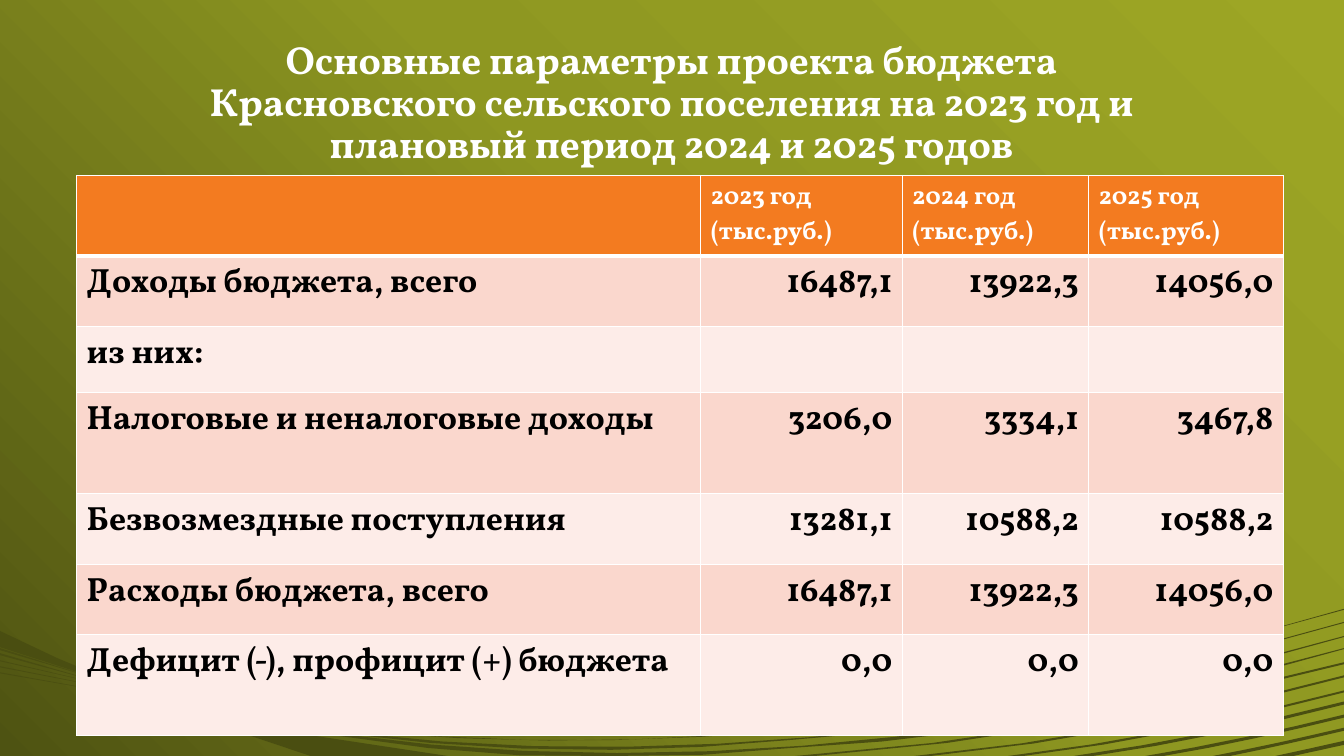
"""Budget summary slide: a title and a table over a green ribbon backdrop."""
from copy import deepcopy

from pptx import Presentation
from pptx import util as u
from pptx.dml.color import RGBColor
from pptx.enum import text
from pptx.oxml import parse_xml
from pptx.oxml.ns import nsdecls, qn

WIDTH, HEIGHT = 13.33, 7.5
FONT = "Vollkorn"
WHITE, BLACK, ORANGE, RIBBON = "FFFFFF", "000000", "F37B20", "4A4E11"
BANDS = ("FAD7CD", "FDECE8")
GRADIENT = [(0, "9DA625"), (0.45, "8E9721"), (1, "4E5312")]

TITLE = ("Основные параметры проекта бюджета Красновского сельского поселения "
         "на 2023 год и плановый период 2024 и 2025 годов")
TITLE_BOX = (1.66, 0.44, 10, 1.27)
TABLE_CORNER = (0.76, 1.74)
COLUMNS = (6.19, 2, 1.85, 1.93)
ROWS = (0.66, 0.7, 0.66, 1, 0.7, 0.7, 1)
BUDGET = [
    ("", "2023 год (тыс.руб.)", "2024 год (тыс.руб.)", "2025 год (тыс.руб.)"),
    ("Доходы бюджета, всего", "16487,1", "13922,3", "14056,0"),
    ("из них:", "", "", ""),
    ("Налоговые и неналоговые доходы", "3206,0", "3334,1", "3467,8"),
    ("Безвозмездные поступления", "13281,1", "10588,2", "10588,2"),
    ("Расходы бюджета, всего", "16487,1", "13922,3", "14056,0"),
    ("Дефицит (-), профицит (+) бюджета", "0,0", "0,0", "0,0"),
]

SHORT_RIBBONS = [(7.35, 0.04, 12.65, 12.83), (7.22, 0.03, 12.03, 12.2),
                 (7.09, 0.03, 11.36, 11.54), (6.96, 0.03, 10.65, 10.84),
                 (6.85, 0.02, 10, 10.15), (6.7, 0.02, 9.07, 9.23),
                 (6.57, 0.02, 7.89, 8.08)]
LONG_RIBBONS = [(6.04, (9.8, 7.08), (6, 7.6), (2.4, 7.11), 7.16, (2.76, 7.16)),
                (6.17, (9.99, 7.13), (6.31, 7.65), (2.76, 7.16), 7.24, (2.58, 7.14)),
                (6.31, (9.93, 7.27), (6.18, 7.75), (2.58, 7.14), 7.34, (2.45, 7.13)),
                (6.43, (9.89, 7.38), (6.08, 7.83), (2.45, 7.13), 7.42, (2.36, 7.11))]
LEFT_RIBBONS = [(6.43, 6.45, 0.88, 6.71), (6.48, 6.5, 1, 6.77), (6.55, 6.56, 1.06, 6.8),
                (6.61, 6.62, 1.2, 6.85), (6.67, 6.68, 1.33, 6.91)]
LEFT_WEDGE = [(0, 6.26), (0.57, 6.53), (1.17, 6.78), (1.8, 6.98), (2.4, 7.11), (3.12, 7.3),
              (4.44, 7.5), (3.08, 7.5), (1.47, 6.96), (0.9, 6.71), (0, 6.42)]


def color(value):
    return RGBColor.from_string(value)


def apply(target, settings):
    for name, value in settings.items():
        setattr(target, name, value)


def write(frame, words, size, ink, paragraph_format):
    paragraph = frame.paragraphs[0]
    apply(paragraph, paragraph_format)
    run = paragraph.add_run()
    run.text = words
    apply(run.font, {"name": FONT, "size": u.Pt(size), "bold": True})
    run.font.color.rgb = color(ink)


def curve(start, first, second, end, steps):
    points = []
    for step in range(steps + 1):
        t = step / steps
        weights = ((1 - t) ** 3, 3 * t * (1 - t) ** 2, 3 * t * t * (1 - t), t ** 3)
        x, y = (sum(w * p[axis] for w, p in zip(weights, (start, first, second, end)))
                for axis in (0, 1))
        points.append((x, min(y, HEIGHT)))
    return points


def short_edge(y, x):
    run, drop = WIDTH - x, HEIGHT - y
    return curve((WIDTH, y), (WIDTH - run / 3, y + drop * (0.3 + 0.22 * drop)),
                 (WIDTH - run * 2 / 3, y + drop * (0.64 + 0.25 * drop)), (x, HEIGHT), 4)


def ribbon_outlines():
    outlines = [LEFT_WEDGE]
    for top, bottom, x, y in LEFT_RIBBONS:
        outlines.append([(0, top), (x, y), (0, bottom)])
    for y, thickness, left, right in SHORT_RIBBONS:
        outlines.append(short_edge(y, left) + short_edge(y + thickness, right)[::-1])
    for y, first, second, tip, middle, end in LONG_RIBBONS:
        upper = curve((WIDTH, y), first, second, tip, 12)
        lower = curve((WIDTH, y + 0.01), (11.46, y + 0.55), (9.62, y + 0.91),
                      (7.86, middle), 6)
        lower += curve((7.86, middle), (6.05, middle + 0.18), (4.3, middle + 0.12), end, 6)[1:]
        outlines.append(upper + lower[::-1])
    return outlines


def add_backdrop(slide):
    fill = slide.background.fill
    fill.gradient()
    fill.gradient_angle = 225
    stops = slide._element.find(".//" + qn("a:gsLst"))
    stops.insert(1, deepcopy(stops[0]))
    for stop, (position, value) in zip(fill.gradient_stops, GRADIENT):
        stop.position = position
        stop.color.rgb = color(value)

    builder = None
    for outline in ribbon_outlines():
        start, *rest = [(x * 1000, y * 1000) for x, y in outline]
        if builder is None:
            builder = slide.shapes.build_freeform(*start, scale=u.Inches(1) / 1000)
        else:
            builder.move_to(*start)
        builder.add_line_segments(rest, close=True)
    ribbons = builder.convert_to_shape()
    ribbons.shadow.inherit = False
    ribbons.fill.solid()
    ribbons.fill.fore_color.rgb = color(RIBBON)
    ribbons.line.fill.background()


def add_title(slide):
    title = slide.shapes.title
    apply(title, dict(zip(("left", "top", "width", "height"), map(u.Inches, TITLE_BOX))))
    apply(title.text_frame, {"word_wrap": True, "auto_size": text.MSO_AUTO_SIZE.NONE,
                             "vertical_anchor": text.MSO_ANCHOR.BOTTOM})
    write(title.text_frame, TITLE, 28, WHITE,
          {"alignment": text.PP_ALIGN.CENTER, "line_spacing": 0.9})


def add_borders(cell, widths):
    properties = cell._tc.get_or_add_tcPr()
    for index, (side, width) in enumerate(widths.items()):
        properties.insert(index, parse_xml(
            f'<a:{side} {nsdecls("a")} w="{u.Pt(width)}"><a:solidFill>'
            f'<a:srgbClr val="{WHITE}"/></a:solidFill></a:{side}>'))


def add_budget_table(slide):
    size = (sum(COLUMNS), sum(ROWS))
    table = slide.shapes.add_table(len(ROWS), len(COLUMNS),
                                   *map(u.Inches, TABLE_CORNER + size)).table
    for column, width in zip(table.columns, COLUMNS):
        column.width = u.Inches(width)
    for row, height in zip(table.rows, ROWS):
        row.height = u.Inches(height)
    for r, entries in enumerate(BUDGET):
        for c, words in enumerate(entries):
            cell = table.cell(r, c)
            cell.fill.solid()
            cell.fill.fore_color.rgb = color(BANDS[(r - 1) % 2] if r else ORANGE)
            add_borders(cell, {"lnL": 1, "lnR": 1, "lnT": 3 if r == 1 else 1,
                               "lnB": 1 if r else 3})
            if words:
                side = text.PP_ALIGN.RIGHT if r and c else text.PP_ALIGN.LEFT
                write(cell.text_frame, words, 24 if r else 18, BLACK if r else WHITE,
                      {"alignment": side})


def main():
    presentation = Presentation()
    apply(presentation, {"slide_width": u.Inches(WIDTH), "slide_height": u.Inches(HEIGHT)})
    slide = presentation.slides.add_slide(presentation.slide_layouts[5])
    add_backdrop(slide)
    add_title(slide)
    add_budget_table(slide)
    presentation.save("out.pptx")


if __name__ == "__main__":
    main()
